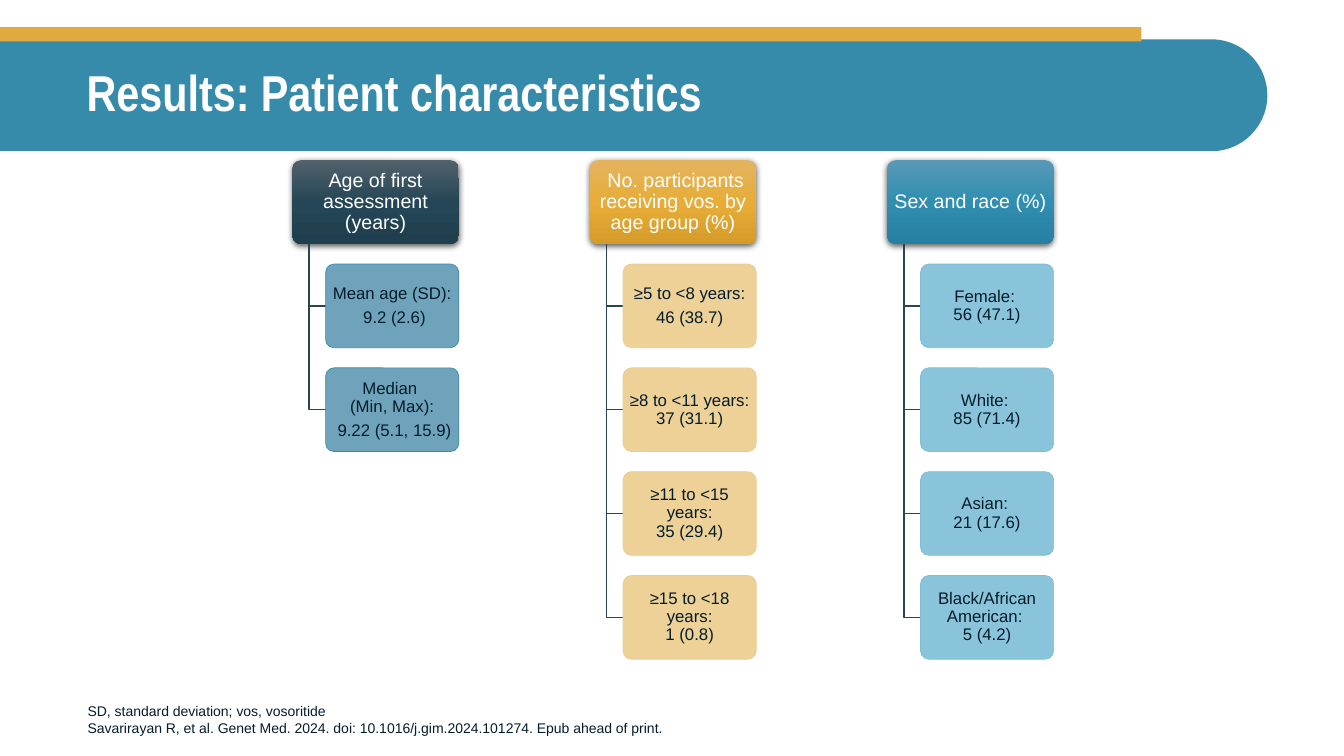
from copy import deepcopy
from dataclasses import dataclass

from pptx import Presentation
from pptx import util as u
from pptx.dml.color import RGBColor
from pptx.enum import shapes, text
from pptx.oxml import ns, parse_xml

# Palette
WHITE = RGBColor(0xFF, 0xFF, 0xFF)
INK = RGBColor(0x05, 0x1C, 0x2C)
BRANCH = RGBColor(0x27, 0x45, 0x54)
TEAL = RGBColor(0x36, 0x8B, 0xAB)
GOLD = RGBColor(0xDF, 0xAA, 0x40)
STEEL = RGBColor(0x60, 0x99, 0xB5)
SAND = RGBColor(0xEC, 0xCC, 0x8C)
SKY = RGBColor(0x7D, 0xBE, 0xD6)
NAVY_FADE = (RGBColor(0x52, 0x61, 0x6C), RGBColor(0x25, 0x46, 0x56), RGBColor(0x1F, 0x3F, 0x4F))
GOLD_FADE = (RGBColor(0xE4, 0xB3, 0x5F), RGBColor(0xE7, 0xAD, 0x38), RGBColor(0xD6, 0x9C, 0x29))
TEAL_FADE = (RGBColor(0x58, 0x99, 0xB6), RGBColor(0x30, 0x8E, 0xB1), RGBColor(0x26, 0x80, 0xA2))

# Grid of the hierarchy, in inches
GRID_LEFT, GRID_TOP = 2.9, 1.59
COLUMN_STEP, ROW_STEP = 2.95, 1.03
HEADER_WIDTH, BOX_HEIGHT = 1.65, 0.83
INDENT = HEADER_WIDTH / 5
CARD_WIDTH = HEADER_WIDTH - INDENT

CARD_FRAME = dict(word_wrap=True, vertical_anchor=text.MSO_ANCHOR.MIDDLE,
                  margin_left=u.Inches(0.03), margin_right=u.Inches(0.03),
                  margin_top=u.Inches(0.02), margin_bottom=u.Inches(0.02))
TITLE_FRAME = dict(word_wrap=True, vertical_anchor=text.MSO_ANCHOR.MIDDLE)
NOTE_FRAME = dict(word_wrap=True, vertical_anchor=text.MSO_ANCHOR.BOTTOM)

HEADER_SHADOW = (
    f'<a:outerShdw {ns.nsdecls("a")} blurRad="57150" dist="19050" dir="5400000" rotWithShape="0">'
    '<a:srgbClr val="000000"><a:alpha val="63000"/></a:srgbClr></a:outerShdw>')


@dataclass(frozen=True)
class Branch:
    heading: str
    fade: tuple[RGBColor, ...]
    fill: RGBColor
    outline: RGBColor
    cards: tuple[tuple[str, ...], ...]  # each card is a tuple of paragraphs


BRANCHES = (
    Branch("Age of first assessment (years)", NAVY_FADE, STEEL, TEAL, (
        ("Mean age (SD):", " 9.2 (2.6)"),
        ("Median \n(Min, Max):", " 9.22 (5.1, 15.9)"))),
    Branch(" No. participants receiving vos. by age group (%)", GOLD_FADE, SAND, SAND, (
        ("≥5 to <8 years:", "46 (38.7)"),
        ("≥8 to <11 years:\n37 (31.1)",),
        ("≥11 to <15 years:\n35 (29.4)",),
        ("≥15 to <18 years:\n1 (0.8)",))),
    Branch("Sex and race (%)", TEAL_FADE, SKY, SKY, (
        ("Female: \n56 (47.1)",),
        ("White: \n85 (71.4)",),
        ("Asian: \n21 (17.6)",),
        ("Black/African American: \n5 (4.2)",))),
)


def set_all(target, values: dict) -> None:
    for key, value in values.items():
        setattr(target, key, value)


def write(frame, paragraphs: tuple[str, ...], frame_format: dict,
          paragraph_format: dict, font_format: dict, color: RGBColor) -> None:
    set_all(frame, frame_format)
    for index, wording in enumerate(paragraphs):
        paragraph = frame.add_paragraph() if index else frame.paragraphs[0]
        paragraph.text = wording
        set_all(paragraph, paragraph_format)
        for run in paragraph.runs:
            set_all(run.font, font_format)
            run.font.color.rgb = color


def add_plain(slide, kind, left: float, top: float, width: float, height: float):
    shape = slide.shapes.add_shape(kind, *map(u.Inches, (left, top, width, height)))
    shape.shadow.inherit = False
    shape.line.fill.background()
    return shape


def add_box(slide, left: float, top: float, width: float,
            paragraphs: tuple[str, ...], size: int, color: RGBColor):
    box = add_plain(slide, shapes.MSO_SHAPE.ROUNDED_RECTANGLE, left, top, width, BOX_HEIGHT)
    box.adjustments[0] = 0.1
    write(box.text_frame, paragraphs, CARD_FRAME,
          dict(alignment=text.PP_ALIGN.CENTER, line_spacing=0.9, space_after=u.Pt(0.35 * size)),
          dict(name="Arial", size=u.Pt(size)), color)
    return box


def add_header(slide, left: float, branch: Branch) -> None:
    header = add_box(slide, left, GRID_TOP, HEADER_WIDTH, (branch.heading,), 14, WHITE)
    header.fill.gradient()
    header.fill.gradient_angle = 270
    stops = header.element.spPr.find(".//" + ns.qn("a:gsLst"))
    stops.append(deepcopy(stops[0]))
    for index, (stop, color) in enumerate(zip(header.fill.gradient_stops, branch.fade)):
        stop.position = index / 2
        stop.color.rgb = color
    header.element.spPr.find(ns.qn("a:effectLst")).append(parse_xml(HEADER_SHADOW))


def add_elbow(slide, left: float, top: float, right: float, bottom: float) -> None:
    builder = slide.shapes.build_freeform(u.Inches(left), u.Inches(top))
    builder.add_line_segments([(u.Inches(left), u.Inches(bottom)),
                               (u.Inches(right), u.Inches(bottom))], close=False)
    elbow = builder.convert_to_shape()
    elbow.shadow.inherit = False
    elbow.fill.background()
    elbow.line.color.rgb = BRANCH
    elbow.line.width = u.Pt(1)


def add_card(slide, left: float, top: float, branch: Branch, paragraphs: tuple[str, ...]) -> None:
    card = add_box(slide, left, top, CARD_WIDTH, paragraphs, 12, INK)
    card.fill.solid()
    card.fill.fore_color.rgb = branch.fill
    tint = card.element.spPr.find(ns.qn("a:solidFill"))[0]
    tint.append(parse_xml(f'<a:alpha {ns.nsdecls("a")} val="90000"/>'))
    card.line.color.rgb = branch.outline
    card.line.width = u.Pt(0.5)


def add_branch(slide, column: int, branch: Branch) -> None:
    left = GRID_LEFT + column * COLUMN_STEP
    add_header(slide, left, branch)
    for row, paragraphs in enumerate(branch.cards, start=1):
        top = GRID_TOP + row * ROW_STEP
        add_elbow(slide, left + INDENT / 2, GRID_TOP + BOX_HEIGHT,
                  left + INDENT, top + BOX_HEIGHT / 2)
        add_card(slide, left + INDENT, top, branch, paragraphs)


def add_banner(slide) -> None:
    # Lying on its side, so that the rounded end points right
    banner = add_plain(slide, shapes.MSO_SHAPE.ROUND_2_SAME_RECTANGLE, 5.73, -5.34, 1.11, 12.57)
    banner.rotation = 270
    banner.adjustments[0], banner.adjustments[1] = 0, 0.5
    stripe = add_plain(slide, shapes.MSO_SHAPE.RECTANGLE, 0, 0.27, 11.32, 0.14)
    for shape, color in ((banner, TEAL), (stripe, GOLD)):
        shape.fill.solid()
        shape.fill.fore_color.rgb = color

    title = slide.shapes.add_textbox(*map(u.Inches, (0.76, 0.39, 11.81, 1.1)))
    write(title.text_frame, ("Results: Patient characteristics",), TITLE_FRAME,
          dict(line_spacing=0.9), dict(name="Arial Narrow", size=u.Pt(36), bold=True), WHITE)


def add_footnote(slide) -> None:
    footnote = slide.shapes.add_textbox(*map(u.Inches, (0.77, 6.71, 9.88, 0.64)))
    write(footnote.text_frame, (
        "SD, standard deviation; vos, vosoritide",
        "Savarirayan R, et al. Genet Med. 2024. doi: 10.1016/j.gim.2024.101274. Epub ahead of print.",
    ), NOTE_FRAME, {}, dict(name="Arial", size=u.Pt(10)), INK)


def main() -> None:
    deck = Presentation()
    deck.slide_width, deck.slide_height = u.Inches(13.33), u.Inches(7.5)
    slide = deck.slides.add_slide(deck.slide_layouts[6])
    add_banner(slide)
    for column, branch in enumerate(BRANCHES):
        add_branch(slide, column, branch)
    add_footnote(slide)
    deck.save("out.pptx")


if __name__ == "__main__":
    main()
